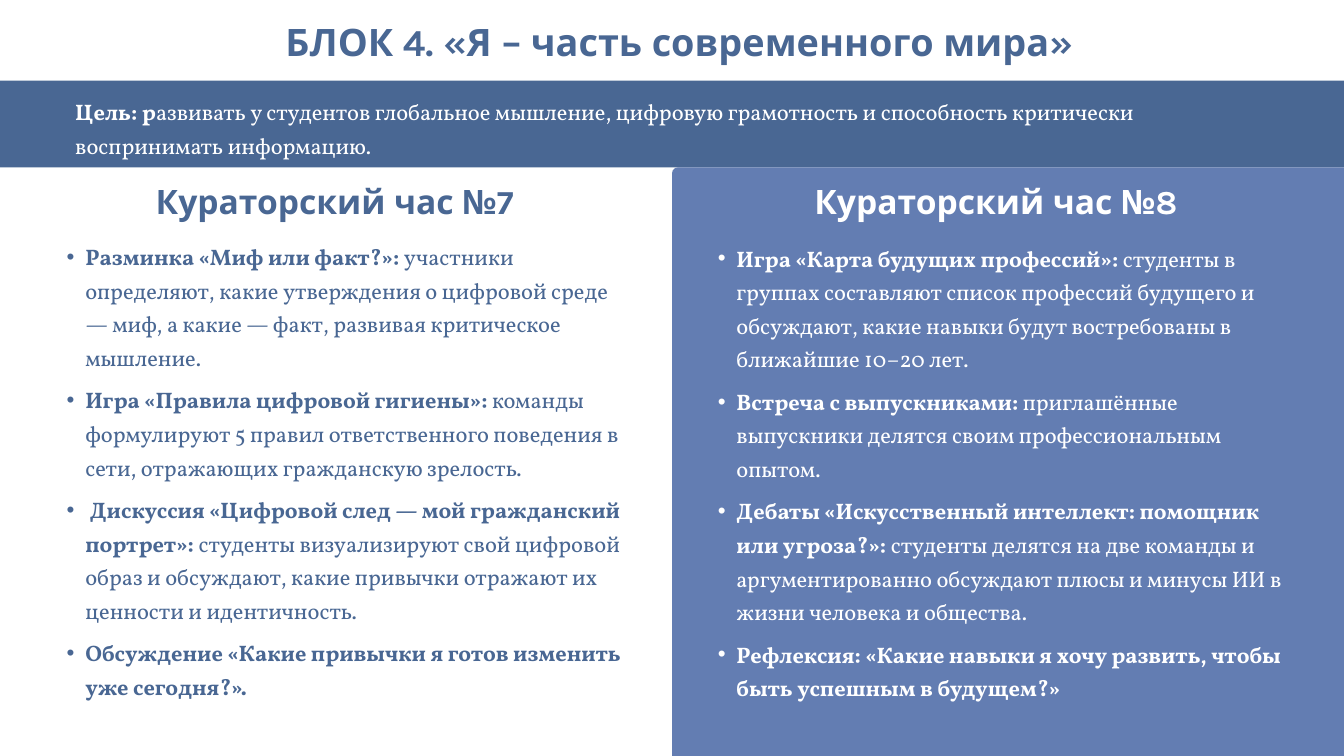
from pptx import Presentation
from pptx.dml.color import RGBColor
from pptx.enum.shapes import MSO_SHAPE as Shape
from pptx.enum.text import MSO_ANCHOR as Anchor, MSO_AUTO_SIZE as AutoSize, PP_ALIGN as Align
from pptx.oxml.ns import qn
from pptx.util import Pt
from lxml.etree import SubElement

BLUE, PERIWINKLE, WHITE = "496793", "637DB2", "FFFFFF"
FRAME = {"word_wrap": True, "auto_size": AutoSize.NONE, "vertical_anchor": Anchor.TOP,
         "margin_left": 0, "margin_top": 0, "margin_right": 0, "margin_bottom": 0}


def rgb(value):
    return RGBColor.from_string(value)


def write(holder, box, items, font, size, color, pitch, align=Align.LEFT, bullet=False):
    for side, length in zip(("left", "top", "width", "height"), box):
        setattr(holder, side, Pt(length))
    frame = holder.text_frame
    for name, value in FRAME.items():
        setattr(frame, name, value)
    for number, item in enumerate(items):
        paragraph = frame.add_paragraph() if number else frame.paragraphs[0]
        if bullet:
            properties = paragraph._p.get_or_add_pPr()
            properties.set("marL", str(Pt(41)))
            properties.set("indent", str(Pt(-20)))
            SubElement(properties, qn("a:buFont")).set("typeface", "Arial")
            SubElement(properties, qn("a:buChar")).set("char", "•")
        layout = {"alignment": align, "line_spacing": Pt(pitch),
                  "space_before": Pt(9.5 if number else 0), "space_after": Pt(0)}
        for name, value in layout.items():
            setattr(paragraph, name, value)
        for text, bold in zip(item, (True, False)):
            run = paragraph.add_run()
            run.text = text
            for name, value in {"name": font, "size": Pt(size), "bold": bold}.items():
                setattr(run.font, name, value)
            run.font.color.rgb = rgb(color)


prs = Presentation()
prs.slide_width, prs.slide_height = Pt(1440), Pt(810)
slide = prs.slides.add_slide(prs.slide_layouts[4])
title, heading_7, plan_7, heading_8, plan_8 = slide.placeholders

backgrounds = [
    ((-12, 86.4, 1464, 92.9), BLUE, 0.03),
    ((720, 179.3, 829.4, 640.8), PERIWINKLE, 0.01),
]
for order, (box, color, rounding) in enumerate(backgrounds):
    block = slide.shapes.add_shape(Shape.ROUNDED_RECTANGLE, *map(Pt, box))
    block.adjustments[0] = rounding
    block.shadow.inherit = False
    block.fill.solid()
    block.fill.fore_color.rgb = rgb(color)
    block.line.fill.background()
    title.element.getparent().insert(2 + order, block.element)

write(title, (153.4, 26.6, 1149, 43.2), [("БЛОК 4. «Я – часть современного мира»",)],
      "Karla", 40.5, BLUE, 41.7, Align.CENTER)

goal = slide.shapes.add_textbox(0, 0, 0, 0)
write(goal, (80.6, 97.9, 1294.6, 69.8),
      [("Цель: р", "азвивать у студентов глобальное мышление, цифровую грамотность и "
                   "способность критически воспринимать информацию.")],
      "Vollkorn", 24, WHITE, 36)

curator_hours = [
    (heading_7, plan_7, "Кураторский час №7", BLUE, 50.4, (50.4, 253.4, 627.8, 550), [
        ("Разминка «Миф или факт?»: ",
         "участники определяют, какие утверждения о цифровой среде — миф, а какие — факт, "
         "развивая критическое мышление."),
        ("Игра «Правила цифровой гигиены»: ",
         "команды формулируют 5 правил ответственного поведения в сети, "
         "отражающих гражданскую зрелость."),
        (" Дискуссия «Цифровой след — мой гражданский портрет»: ",
         "студенты визуализируют свой цифровой образ и обсуждают, какие привычки отражают "
         "их ценности и идентичность."),
        ("Обсуждение «Какие привычки я готов изменить уже сегодня?».",),
    ]),
    (heading_8, plan_8, "Кураторский час №8", WHITE, 758.9, (748.1, 254.9, 638.6, 550), [
        ("Игра «Карта будущих профессий»: ",
         "студенты в группах составляют список профессий будущего и обсуждают, "
         "какие навыки будут востребованы в ближайшие 10–20 лет."),
        ("Встреча с выпускниками: ",
         "приглашённые выпускники делятся своим профессиональным опытом."),
        ("Дебаты «Искусственный интеллект: помощник или угроза?»: ",
         "студенты делятся на две команды и аргументированно обсуждают плюсы и минусы ИИ "
         "в жизни человека и общества."),
        ("Рефлексия: «Какие навыки я хочу развить, чтобы быть успешным в будущем?»",),
    ]),
]
for heading, plan, name, color, heading_left, plan_box, activities in curator_hours:
    write(heading, (heading_left, 200.2, 616.3, 38.2), [(name,)],
          "Karla", 36, color, 37.1, Align.CENTER)
    write(plan, plan_box, activities, "Vollkorn", 24, color, 36, bullet=True)

prs.save("out.pptx")
